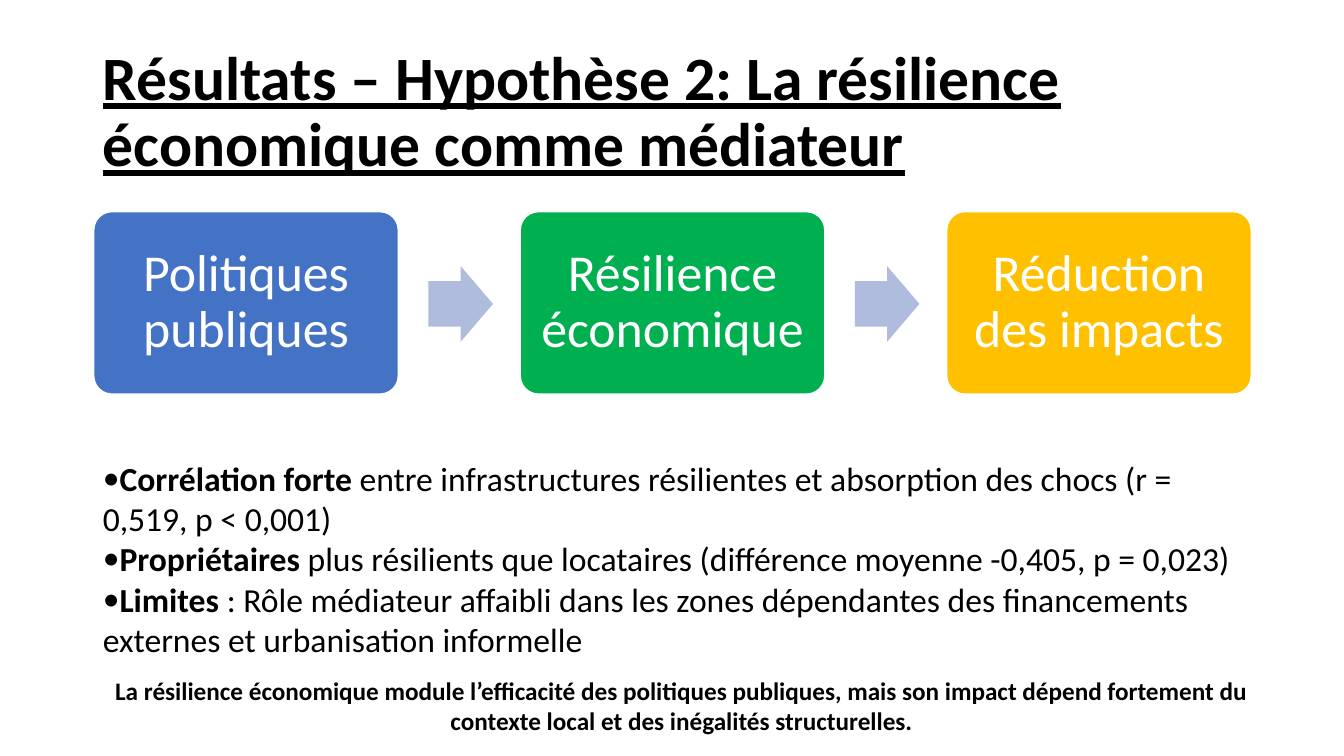
from dataclasses import dataclass

import lxml.etree
import pptx
import pptx.dml.color
import pptx.enum.shapes
import pptx.enum.text
import pptx.oxml.ns
import pptx.util

SLIDE_WIDTH = pptx.util.Inches(13.33)
SLIDE_HEIGHT = pptx.util.Inches(7.5)
FONT = "Calibri"
BLACK, WHITE, ARROW_FILL = "000000", "FFFFFF", "B0BCDE"
ALIGN = pptx.enum.text.PP_ALIGN
ANCHOR = pptx.enum.text.MSO_ANCHOR
SHAPE = pptx.enum.shapes.MSO_SHAPE


@dataclass(frozen=True)
class Area:
    """Position and size in percent of the slide's width and height."""
    left: float
    top: float
    width: float
    height: float

    def shifted(self, distance: float) -> "Area":
        return Area(self.left + distance, self.top, self.width, self.height)

    def emu(self) -> tuple[int, int, int, int]:
        return (int(SLIDE_WIDTH * self.left / 100), int(SLIDE_HEIGHT * self.top / 100),
                int(SLIDE_WIDTH * self.width / 100), int(SLIDE_HEIGHT * self.height / 100))


@dataclass(frozen=True)
class Stage:
    label: str
    fill: str


@dataclass(frozen=True)
class Finding:
    lead: str
    detail: str


TITLE = "Résultats – Hypothèse 2: La résilience économique comme médiateur"
STAGES = [
    Stage("Politiques publiques", "4472C4"),
    Stage("Résilience économique", "00B050"),
    Stage("Réduction des impacts", "FFC000"),
]
FINDINGS = [
    Finding("Corrélation forte ",
            "entre infrastructures résilientes et absorption des chocs (r = 0,519, p < 0,001)"),
    Finding("Propriétaires",
            " plus résilients que locataires (différence moyenne -0,405, p = 0,023)"),
    Finding("Limites",
            " : Rôle médiateur affaibli dans les zones dépendantes des financements "
            "externes et urbanisation informelle"),
]
CONCLUSION = ("La résilience économique module l’efficacité des politiques publiques, mais son "
              "impact dépend fortement du contexte local et des inégalités structurelles.")

TITLE_AREA = Area(6.9, 5.33, 86.25, 19.33)
STAGE_AREA = Area(6.98, 28, 22.66, 24.13)
ARROW_AREA = Area(31.88, 35.2, 4.8, 10)
STAGE_STEP = 31.73
FINDINGS_AREA = Area(6.9, 59.87, 86.25, 28.27)
CONCLUSION_AREA = Area(6.9, 88.67, 87.62, 9.33)


def rgb(value: str) -> pptx.dml.color.RGBColor:
    return pptx.dml.color.RGBColor.from_string(value)


def style_run(run, size: float, color: str = BLACK, bold: bool = False) -> None:
    run.font.name = FONT
    run.font.size = pptx.util.Pt(size)
    run.font.bold = bold
    run.font.color.rgb = rgb(color)


def place(shape, area: Area) -> None:
    shape.left, shape.top, shape.width, shape.height = area.emu()


def prepare_frame(frame, anchor) -> None:
    frame.word_wrap = True
    frame.auto_size = pptx.enum.text.MSO_AUTO_SIZE.NONE
    frame.vertical_anchor = anchor


def add_filled(slide, kind, area: Area, fill: str):
    shape = slide.shapes.add_shape(kind, *area.emu())
    shape.shadow.inherit = False
    shape.fill.solid()
    shape.fill.fore_color.rgb = rgb(fill)
    shape.line.fill.background()
    return shape


def add_stage(slide, stage: Stage, area: Area) -> None:
    box = add_filled(slide, SHAPE.ROUNDED_RECTANGLE, area, stage.fill)
    box.adjustments[0] = 0.1
    box.line.color.rgb = rgb(WHITE)
    box.line.width = pptx.util.Pt(1)
    frame = box.text_frame
    prepare_frame(frame, ANCHOR.MIDDLE)
    inset = pptx.util.Inches(0.15)
    frame.margin_left = frame.margin_right = frame.margin_top = frame.margin_bottom = inset
    frame.text = stage.label
    label = frame.paragraphs[0]
    label.alignment = ALIGN.CENTER
    label.line_spacing = 0.9
    style_run(label.runs[0], 37, WHITE)


def add_arrow(slide, area: Area) -> None:
    arrow = add_filled(slide, SHAPE.RIGHT_ARROW, area, ARROW_FILL)
    arrow.adjustments[0] = 0.6
    arrow.adjustments[1] = 0.5


def set_bullet(paragraph) -> None:
    properties = paragraph._p.get_or_add_pPr()
    properties.set("marL", "0")
    properties.set("indent", "0")
    qn = pptx.oxml.ns.qn
    lxml.etree.SubElement(properties, qn("a:buFont")).set("typeface", FONT)
    lxml.etree.SubElement(properties, qn("a:buChar")).set("char", "•")


def fill_title(title) -> None:
    place(title, TITLE_AREA)
    prepare_frame(title.text_frame, ANCHOR.MIDDLE)
    title.text_frame.text = TITLE
    heading = title.text_frame.paragraphs[0]
    heading.alignment = ALIGN.LEFT
    heading.line_spacing = 0.9
    style_run(heading.runs[0], 44, bold=True)
    heading.runs[0].font.underline = True


def fill_findings(body) -> None:
    place(body, FINDINGS_AREA)
    frame = body.text_frame
    prepare_frame(frame, ANCHOR.TOP)
    for index, finding in enumerate(FINDINGS):
        paragraph = frame.add_paragraph() if index else frame.paragraphs[0]
        paragraph.text = finding.lead
        paragraph.add_run().text = finding.detail
        paragraph.alignment = ALIGN.LEFT
        paragraph.line_spacing = 1.0
        paragraph.space_before = paragraph.space_after = pptx.util.Pt(0)
        set_bullet(paragraph)
        lead, detail = paragraph.runs
        style_run(lead, 24, bold=True)
        style_run(detail, 24)


def add_conclusion(slide) -> None:
    frame = slide.shapes.add_textbox(*CONCLUSION_AREA.emu()).text_frame
    prepare_frame(frame, ANCHOR.TOP)
    frame.text = CONCLUSION
    frame.paragraphs[0].alignment = ALIGN.CENTER
    style_run(frame.paragraphs[0].runs[0], 18, bold=True)


def main() -> None:
    deck = pptx.Presentation()
    deck.slide_width, deck.slide_height = SLIDE_WIDTH, SLIDE_HEIGHT
    slide = deck.slides.add_slide(deck.slide_layouts[1])

    # Title
    fill_title(slide.shapes.title)

    # Mediation chain: stages joined by arrows
    for column, stage in enumerate(STAGES):
        add_stage(slide, stage, STAGE_AREA.shifted(column * STAGE_STEP))
        if column < len(STAGES) - 1:
            add_arrow(slide, ARROW_AREA.shifted(column * STAGE_STEP))

    # Findings and conclusion
    fill_findings(slide.placeholders[1])
    add_conclusion(slide)

    deck.save("out.pptx")


if __name__ == "__main__":
    main()
